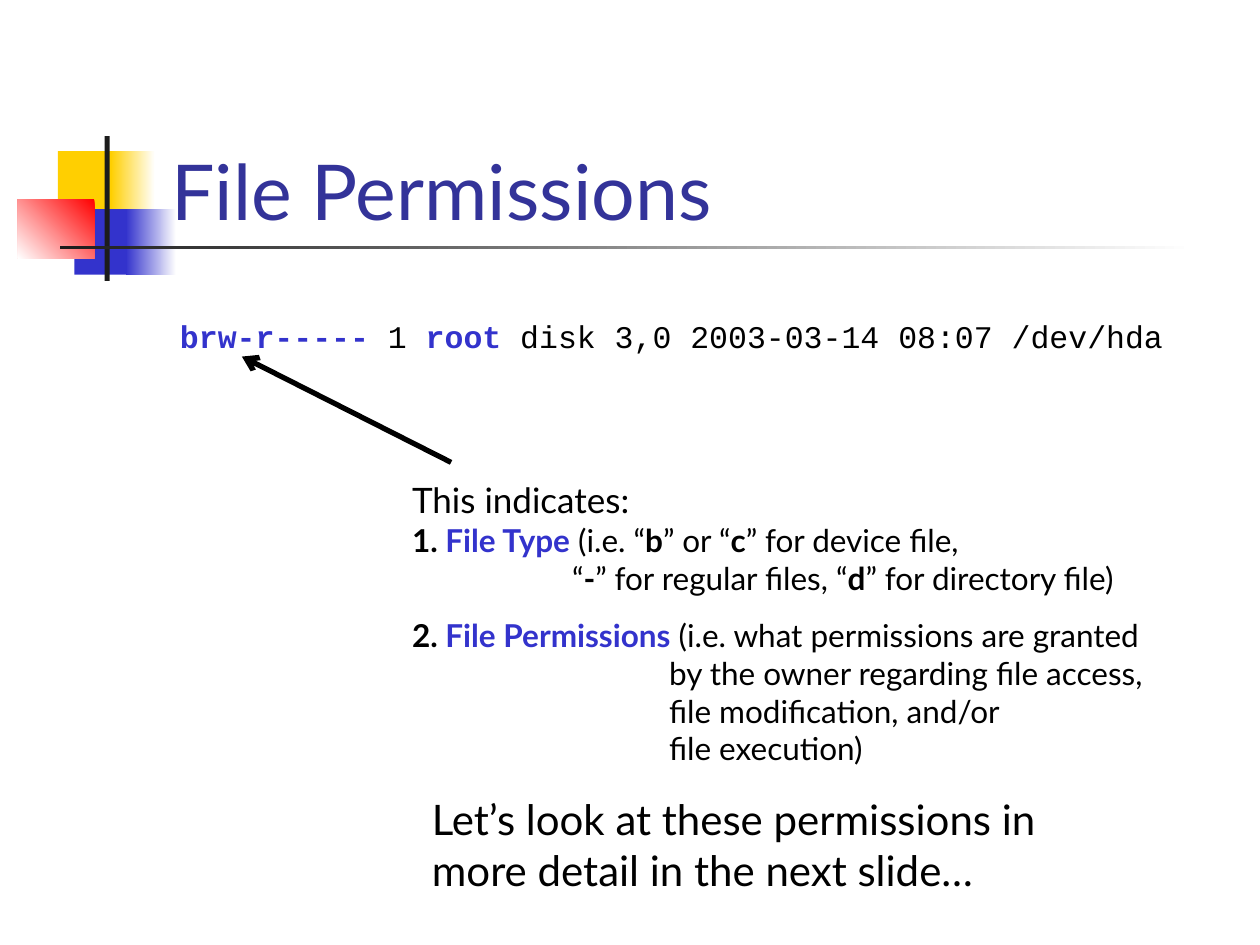
import pptx
import pptx.dml.color
import pptx.enum.shapes
import pptx.enum.text
import pptx.oxml.ns
import pptx.util
from lxml import etree

PX = 9144
BLUE, YELLOW, DARK, WHITE = "3333CC", "FFCF01", "1C1C1C", "FFFFFF"
ANCHOR = pptx.enum.text.MSO_ANCHOR


def rgb(value):
    return pptx.dml.color.RGBColor.from_string(value)


def add_child(parent, tag, **attributes):
    return etree.SubElement(parent, pptx.oxml.ns.qn(tag), **attributes)


def write(para, text, size=18, color="000000", bold=False, font="Lato"):
    for index, line in enumerate(text.split("\n")):
        if index:
            para.add_line_break()
        span = para.add_run()
        span.text = line
        span.font.size = pptx.util.Pt(size)
        span.font.color.rgb = rgb(color)
        span.font.bold = bold
        span.font.name = font


class Page:
    """Holds the style and the current slide, with one method per kind of element."""

    def __init__(self, deck):
        self.slide = deck.slides.add_slide(deck.slide_layouts[1])
        self.shapes = self.slide.shapes

    def place(self, box, bounds, anchor=ANCHOR.TOP):
        box.left, box.top, box.width, box.height = [n * PX for n in bounds]
        frame = box.text_frame
        frame.word_wrap = True
        frame.auto_size = pptx.enum.text.MSO_AUTO_SIZE.NONE
        frame.vertical_anchor = anchor
        return frame

    def block(self, bounds, *colors, angle=180):
        box = self.shapes.add_shape(
            pptx.enum.shapes.MSO_SHAPE.RECTANGLE, *[n * PX for n in bounds])
        box.shadow.inherit = False
        box.line.fill.background()
        if len(colors) == 1:
            box.fill.solid()
            box.fill.fore_color.rgb = rgb(colors[0])
            return
        box.fill.gradient()
        box.fill.gradient_angle = angle
        for stop, color in zip(box.fill.gradient_stops, colors):
            stop.color.rgb = rgb(color)

    def title(self, text, bounds):
        para = self.place(self.shapes.title, bounds, ANCHOR.BOTTOM).paragraphs[0]
        para.alignment = pptx.enum.text.PP_ALIGN.LEFT
        write(para, text, size=44, color="333399")

    def body(self, items, bounds):
        frame = self.place(self.slide.placeholders[1], bounds)
        for index, (indent, before, spans) in enumerate(items):
            para = frame.add_paragraph() if index else frame.paragraphs[0]
            para.space_before = pptx.util.Pt(before)
            properties = para._p.get_or_add_pPr()
            properties.set("marL", str(indent * PX))
            properties.set("indent", str(-indent * PX))
            add_child(properties, "a:buNone")
            for text, style in spans:
                write(para, text, **style)

    def text(self, spans, bounds, anchor=ANCHOR.TOP):
        box = self.shapes.add_textbox(0, 0, 0, 0)
        para = self.place(box, bounds, anchor).paragraphs[0]
        for text, style in spans:
            write(para, text, **style)

    def arrow(self, start, end, color="000000", width=3):
        line = self.shapes.add_connector(
            pptx.enum.shapes.MSO_CONNECTOR.STRAIGHT,
            *[n * PX for n in start + end])
        line.line.color.rgb = rgb(color)
        line.line.width = pptx.util.Pt(width)
        add_child(line.line._get_or_add_ln(), "a:tailEnd", type="arrow")
        add_child(line._element.spPr, "a:effectLst")


def main():
    deck = pptx.Presentation()
    deck.slide_width, deck.slide_height = 1000 * PX, 750 * PX
    page = Page(deck)

    page.block((46, 120, 48, 52), YELLOW)
    page.block((88, 120, 35, 52), WHITE, YELLOW)
    page.block((59, 166, 46, 52), BLUE)
    page.block((100, 166, 40, 52), WHITE, BLUE)
    page.block((14, 158, 61, 47), "FF0000", WHITE, angle=225)
    page.block((83, 108, 4, 115), DARK)
    page.block((48, 195, 900, 3), WHITE, DARK)

    page.title("File Permissions", (126, 67, 852, 125))

    code = {"font": "Courier New"}
    code_key = {**code, "color": BLUE, "bold": True}
    page.text([
        ("brw-r-----", code_key),
        (" 1 ", code),
        ("root", code_key),
        (" disk 3,0 2003-03-14 08:07 /dev/hda", code),
    ], (133, 217, 825, 100), ANCHOR.MIDDLE)

    plain, bold, key = {}, {"bold": True}, {"bold": True, "color": BLUE}
    page.body([
        (0, 0, [("This indicates:", {"size": 20})]),
        (127, 0, [
            ("1. ", bold), ("File Type", key), (" (i.e. “", plain), ("b", bold),
            ("” or “", plain), ("c", bold), ("” for device file,\n“", plain),
            ("-", bold), ("” for regular files, “", plain), ("d", bold),
            ("” for directory file)", plain),
        ]),
        (204, 11.2, [
            ("2. ", bold), ("File Permissions", key),
            (" (i.e. what permissions are granted\n"
             "by the owner regarding file access,\n"
             "file modification, and/or\nfile execution)", plain),
        ]),
    ], (317, 375, 667, 329))

    page.arrow((358, 367), (192, 283))
    page.text([
        ("Let’s look at these permissions in\nmore detail in the next slide…",
         {"size": 24}),
    ], (333, 625, 633, 90))
    deck.save("out.pptx")


if __name__ == "__main__":
    main()
